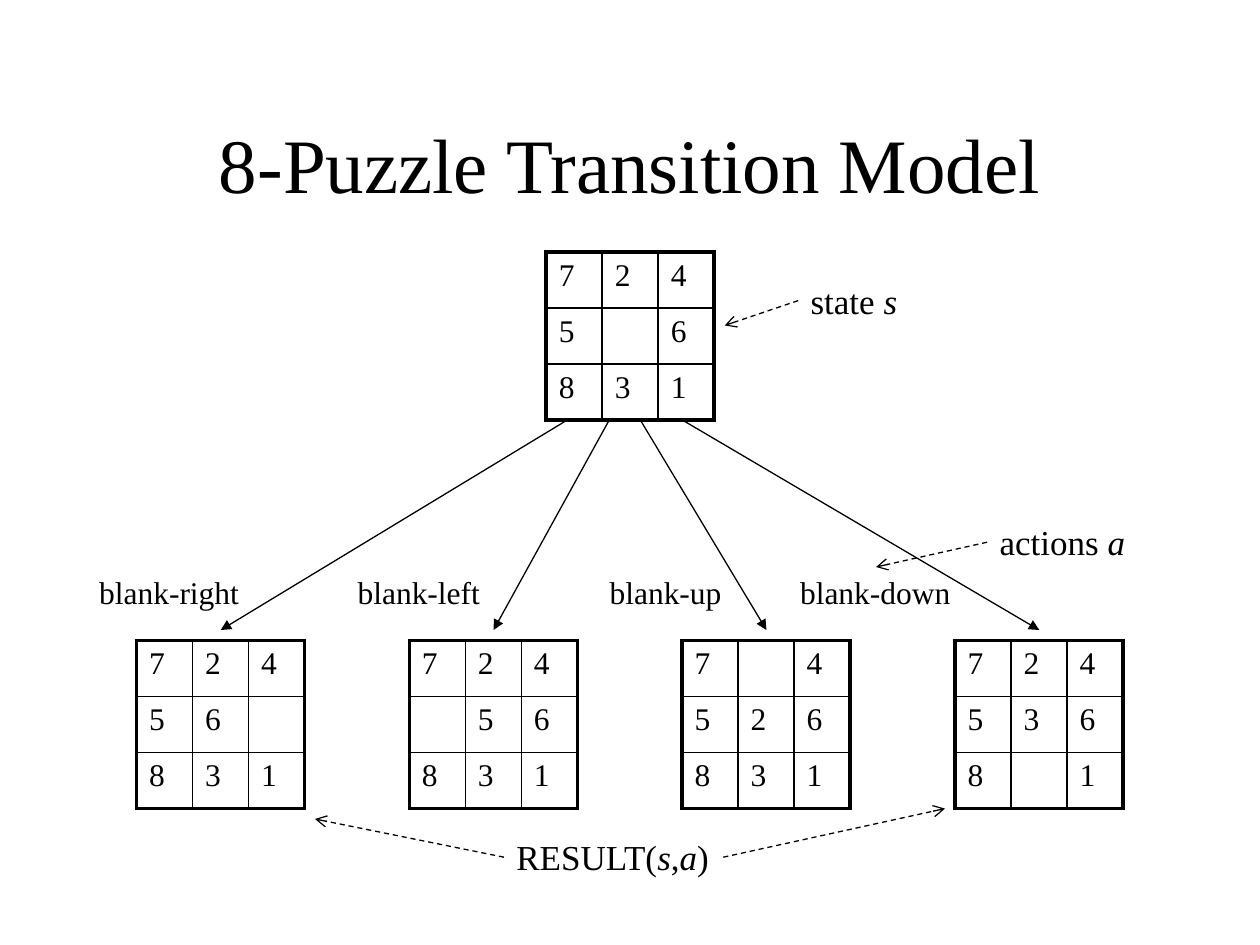
from lxml.etree import SubElement
from pptx import Presentation
from pptx.dml.color import RGBColor
from pptx.enum.dml import MSO_LINE
from pptx.enum.shapes import MSO_CONNECTOR
from pptx.enum.text import MSO_ANCHOR, MSO_AUTO_SIZE, PP_ALIGN
from pptx.oxml.ns import qn
from pptx.util import Cm, Pt

BLACK = RGBColor(0x00, 0x00, 0x00)
FONT = "Times New Roman"
CELL = 1.13
STEP = 5.5


def add_runs(p, size, texts):
    for i, text in enumerate(texts):
        r = p.add_run()
        r.text = text
        r.font.name = FONT
        r.font.size = Pt(size)
        r.font.italic = i % 2 == 1
        r.font.color.rgb = BLACK


def add_arrow(x1, y1, x2, y2, head):
    s = slide.shapes.add_connector(MSO_CONNECTOR.STRAIGHT, Cm(x1), Cm(y1), Cm(x2), Cm(y2))
    s.line.color.rgb = BLACK
    s.line.width = Pt(0.75)
    if head == "arrow":
        s.line.dash_style = MSO_LINE.DASH
    SubElement(s.line._get_or_add_ln(), qn("a:tailEnd"), type=head)
    SubElement(s._element.spPr, qn("a:effectLst"))


prs = Presentation()
prs.slide_width, prs.slide_height = Cm(25.4), Cm(19.05)
slide = prs.slides.add_slide(prs.slide_layouts[6])

title = slide.shapes.add_textbox(Cm(1.9), Cm(1.69), Cm(21.6), Cm(3.18))
tf = title.text_frame
tf.word_wrap = True
tf.vertical_anchor = MSO_ANCHOR.MIDDLE
tf.paragraphs[0].alignment = PP_ALIGN.CENTER
add_runs(tf.paragraphs[0], 44, ["8-Puzzle Transition Model"])

boards = [(11.01, 5.08, "7245 6831")]
results = ["72456 831", "724 56831", "7 4526831", "7245368 1"]
boards += [(2.75 + i * STEP, 12.91, tiles) for i, tiles in enumerate(results)]

for x, y, tiles in boards:
    table = slide.shapes.add_table(3, 3, Cm(x), Cm(y), Cm(3 * CELL), Cm(3 * CELL)).table
    table.first_row = table.horz_banding = False
    for i in range(3):
        table.columns[i].width = table.rows[i].height = Cm(CELL)
    for i, tile in enumerate(tiles):
        row, col = divmod(i, 3)
        cell = table.cell(row, col)
        if tile != " ":
            p = cell.text_frame.paragraphs[0]
            spacing = SubElement(p._p.get_or_add_pPr(), qn("a:spcBef"))
            SubElement(spacing, qn("a:spcPct"), val="20000")
            add_runs(p, 18, [tile])
        outer = {"L": col == 0, "R": col == 2, "T": row == 0, "B": row == 2}
        for side, thick in outer.items():
            width = Pt(2.25 if thick else 1)
            ln = SubElement(cell._tc.get_or_add_tcPr(), qn(f"a:ln{side}"), w=str(int(width)))
            SubElement(SubElement(ln, qn("a:solidFill")), qn("a:srgbClr"), val=str(BLACK))
        cell.fill.background()

for i, x in enumerate([11.43, 12.28, 12.91, 13.76]):
    add_arrow(x, 8.47, 4.45 + i * STEP, 12.7, "triangle")

labels = [
    (1.75, 11.43, 3.33, 18, ["blank-right"]),
    (6.96, 11.43, 2.97, 18, ["blank-left"]),
    (12.04, 11.43, 2.77, 18, ["blank-up"]),
    (15.88, 11.43, 3.56, 18, ["blank-down"]),
    (16.09, 5.5, 2.26, 20, ["state ", "s"]),
    (19.9, 10.37, 3.05, 20, ["actions ", "a"]),
    (10.16, 16.72, 4.42, 20, ["RESULT(", "s", ",", "a", ")"]),
]
for x, y, w, size, texts in labels:
    s = slide.shapes.add_textbox(Cm(x), Cm(y), Cm(w), Cm(size * 0.056))
    tf = s.text_frame
    tf.word_wrap = False
    tf.auto_size = MSO_AUTO_SIZE.SHAPE_TO_FIT_TEXT
    add_runs(tf.paragraphs[0], size, texts)

for ends in [
    (16.09, 6.06, 14.61, 6.56),
    (19.9, 10.93, 17.66, 11.43),
    (10.16, 17.28, 6.35, 16.51),
    (14.58, 17.28, 19.05, 16.3),
]:
    add_arrow(*ends, "arrow")

prs.save("out.pptx")
